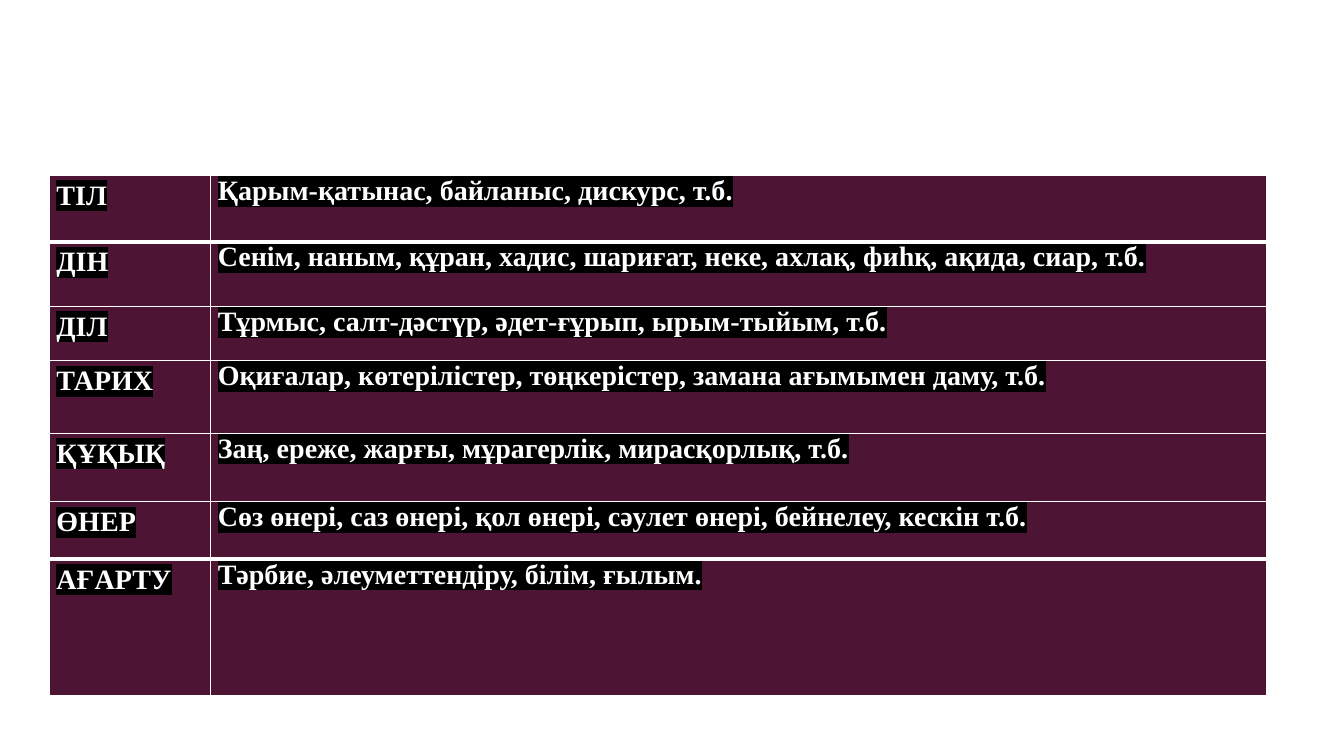
from lxml import etree
from pptx import Presentation
from pptx.dml.color import RGBColor
from pptx.enum.text import PP_ALIGN
from pptx.oxml.ns import qn
from pptx.util import Inches, Pt

JUSTIFY = PP_ALIGN.JUSTIFY
FONT = "Times New Roman"
PLUM = "4D1434"
WHITE = "FFFFFF"
BLACK = "000000"
COLUMN_WIDTHS = (1.6, 10.47)
THICK_RULES = (1, 6)
TOPICS = (
    ("ТІЛ", "Қарым-қатынас, байланыс, дискурс, т.б.", 0.66),
    ("ДІН", "Сенім, наным, құран, хадис, шариғат, неке, ахлақ, фиһқ, ақида, сиар, т.б.", 0.64),
    ("ДІЛ", "Тұрмыс, салт-дәстүр, әдет-ғұрып, ырым-тыйым, т.б.", 0.54),
    ("ТАРИХ", "Оқиғалар, көтерілістер, төңкерістер, замана ағымымен даму, т.б.", 0.72),
    ("ҚҰҚЫҚ", "Заң, ереже, жарғы, мұрагерлік, мирасқорлық, т.б.", 0.68),
    ("ӨНЕР", "Сөз өнері, саз өнері, қол өнері, сәулет өнері, бейнелеу, кескін т.б.", 0.57),
    ("АҒАРТУ", "Тәрбие, әлеуметтендіру, білім, ғылым.", 1.35),
)


def color(value):
    return RGBColor.from_string(value)


def add_solid_color(parent, tag, value):
    element = etree.SubElement(parent, qn(tag))
    etree.SubElement(element, qn("a:srgbClr"), val=value)


def set_borders(cell, top, bottom):
    properties = cell._tc.get_or_add_tcPr()
    sides = (("a:lnL", 1), ("a:lnR", 1), ("a:lnT", top), ("a:lnB", bottom))
    for index, (tag, points) in enumerate(sides):
        line = etree.Element(qn(tag), w=str(Pt(points)))
        add_solid_color(line, "a:solidFill", WHITE)
        properties.insert(index, line)


def write_cell(cell, text, line_spacing):
    cell.margin_left = cell.margin_right = Inches(0.07)
    cell.margin_top = cell.margin_bottom = 0
    cell.fill.solid()
    cell.fill.fore_color.rgb = color(PLUM)
    paragraph = cell.text_frame.paragraphs[0]
    paragraph.alignment = JUSTIFY
    paragraph.line_spacing = line_spacing
    font = paragraph.font
    font.name = FONT
    font.size = Pt(20)
    font.bold = True
    font.color.rgb = color(WHITE)
    run = paragraph.add_run()
    run.text = text
    add_solid_color(run._r.get_or_add_rPr(), "a:highlight", BLACK)


def rule_width(index):
    return 3 if index in THICK_RULES else 1


def add_topic_table(slide):
    height = sum(row_height for _, _, row_height in TOPICS)
    frame = slide.shapes.add_table(
        len(TOPICS), len(COLUMN_WIDTHS), Inches(0.49), Inches(1.74),
        Inches(sum(COLUMN_WIDTHS)), Inches(height))
    table = frame.table
    for column, width in zip(table.columns, COLUMN_WIDTHS):
        column.width = Inches(width)
    for index, (topic, concepts, row_height) in enumerate(TOPICS):
        row = table.rows[index]
        row.height = Inches(row_height)
        for cell, text, spacing in zip(row.cells, (topic, concepts), (1.15, 1.0)):
            write_cell(cell, text, spacing)
            set_borders(cell, rule_width(index), rule_width(index + 1))


def main():
    presentation = Presentation()
    presentation.slide_width = Inches(13.33)
    presentation.slide_height = Inches(7.5)
    slide = presentation.slides.add_slide(presentation.slide_layouts[6])
    add_topic_table(slide)
    presentation.save("out.pptx")


if __name__ == "__main__":
    main()
